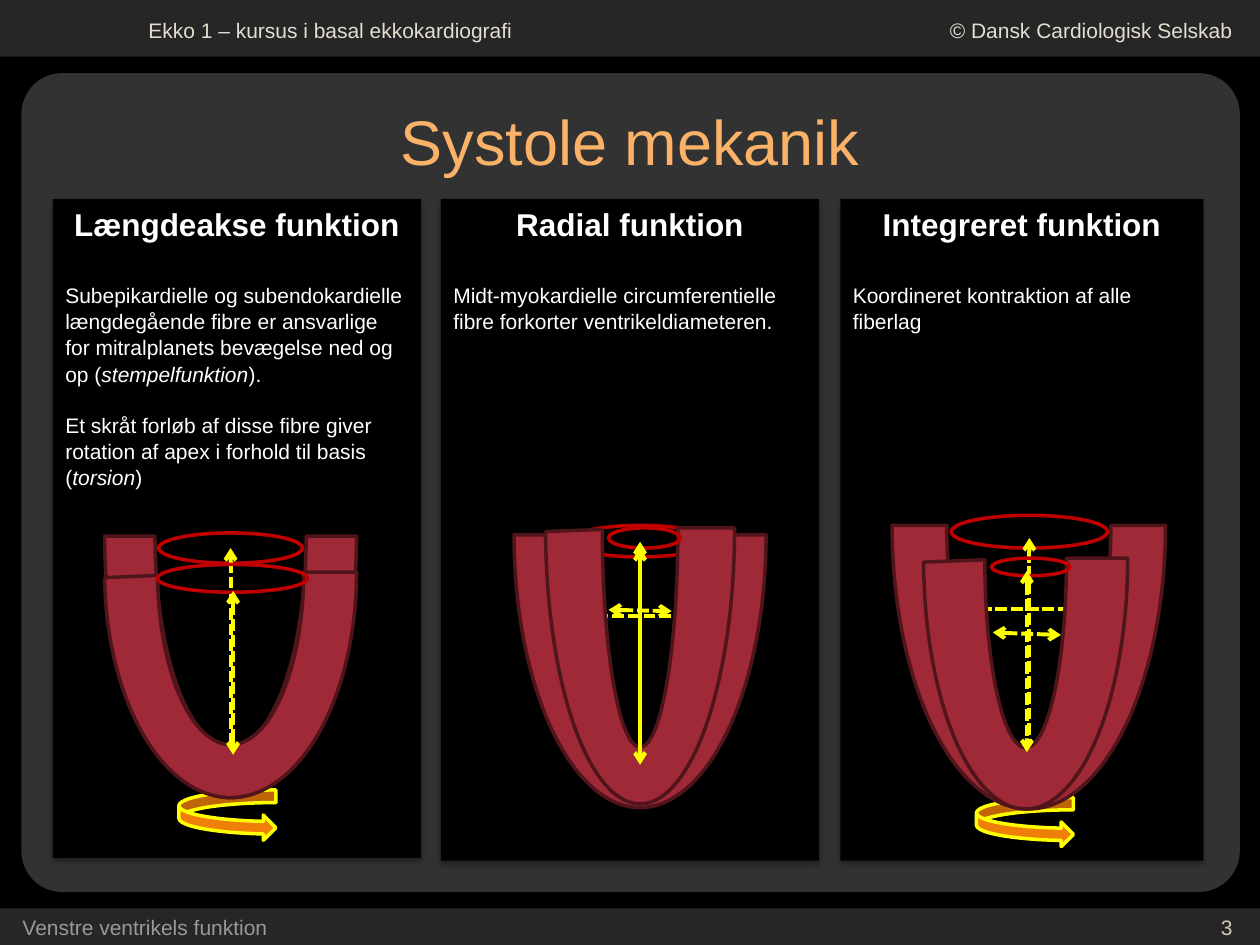
import pptx
import pptx.util
import pptx.dml.color
import pptx.oxml
import pptx.oxml.ns
import pptx.enum.dml
import pptx.enum.shapes
import pptx.enum.text
from lxml import etree

Inches = pptx.util.Inches
Pt = pptx.util.Pt
RGBColor = pptx.dml.color.RGBColor
Shape = pptx.enum.shapes.MSO_SHAPE
Align = pptx.enum.text.PP_ALIGN
qn = pptx.oxml.ns.qn

BLACK = RGBColor(0x00, 0x00, 0x00)
WHITE = RGBColor(0xFF, 0xFF, 0xFF)
BAR = RGBColor(0x26, 0x26, 0x26)
PLATE = RGBColor(0x32, 0x32, 0x32)
CREAM = RGBColor(0xE3, 0xDE, 0xD1)
SAND = RGBColor(0xD3, 0xCB, 0xB6)
GRAY = RGBColor(0x99, 0x99, 0x99)
PEACH = RGBColor(0xF9, 0xB2, 0x68)
MUSCLE = RGBColor(0x9F, 0x29, 0x36)
EDGE = RGBColor(0x50, 0x14, 0x1B)
RED = RGBColor(0xC0, 0x00, 0x00)
ORANGE = RGBColor(0xF0, 0x7F, 0x09)
YELLOW = RGBColor(0xFF, 0xFF, 0x00)

RELAXED = (108, 0, 0.2)
SHORT = (108, 214.47, 0.21)
THICK = (108, 214.7, 0.3)

# Box, wall shape, valve ring and axes; hearts are placed relative to the
# panel, rings and axes relative to the heart.
PANELS = [
    {"box": (0.42, 1.58, 2.92, 5.23),
     "head": "Længdeakse funktion",
     "body": [
         ["Subepikardielle og subendokardielle længdegående fibre er "
          "ansvarlige for mitralplanets bevægelse ned og op (",
          "stempelfunktion", ")."],
         ["Et skråt forløb af disse fibre giver rotation af apex i "
          "forhold til basis (", "torsion", ")"]],
     "twist": (1, 4.69, 0.77, 0.4),
     "hearts": [
         ((0.41, 0.6, 2, 4.15), RELAXED, (0.43, 2.05, 1.14, 0.24),
          [(1, 2.17, 1, 3.86)]),
         ((0.41, 1.17, 2, 3.58), SHORT, (0.42, 1.73, 1.19, 0.22),
          [(1.02, 1.94, 1.02, 3.24)])]},
    {"box": (3.5, 1.58, 3, 5.25),
     "head": "Radial funktion",
     "body": [["Midt-myokardielle circumferentielle fibre forkorter "
               "ventrikeldiameteren."]],
     "twist": None,
     "hearts": [
         ((0.58, 0.5, 2, 4.33), RELAXED, (0.43, 2.09, 1.14, 0.25),
          [(1, 2.27, 1, 4.03), (0.43, 2.81, 1.57, 2.81)]),
         ((0.83, 0.42, 1.5, 4.38), THICK, (0.5, 2.19, 0.57, 0.16),
          [(0.75, 2.3, 0.75, 4.07), (0.5, 2.84, 1, 2.85)])]},
    {"box": (6.67, 1.58, 2.88, 5.25),
     "head": "Integreret funktion",
     "body": [["Koordineret kontraktion af alle fiberlag"]],
     "twist": (1.08, 4.75, 0.77, 0.39),
     "hearts": [
         ((0.41, 0.34, 2.17, 4.5), RELAXED, (0.47, 2.17, 1.24, 0.26),
          [(1.09, 2.35, 1.09, 4.18), (0.47, 2.91, 1.71, 2.91)]),
         ((0.66, 0.86, 1.62, 3.98), THICK, (0.54, 1.99, 0.62, 0.14),
          [(0.82, 2.09, 0.82, 3.53), (0.55, 2.58, 1.09, 2.6)])]},
]


def shift(box, part):
    """Turn a part's offset inside a box into a place on the slide."""
    return (box[0] + part[0], box[1] + part[1], *part[2:])


def draw(shapes, kind, box, fill=None, line=None):
    shape = shapes.add_shape(kind, *map(Inches, box))
    shape.shadow.inherit = False
    if fill is None:
        shape.fill.background()
    else:
        shape.fill.solid()
        shape.fill.fore_color.rgb = fill
    if line is None:
        shape.line.fill.background()
    else:
        shape.line.color.rgb = line
        shape.line.width = Pt(2)
    return shape


def style(para, size, color, align=Align.LEFT, bold=False):
    para.alignment = align
    font = para.font
    font.name, font.size, font.bold = "Arial", Pt(size), bold
    font.color.rgb = color


def label(slide, box, text, color, align=Align.LEFT):
    frame = slide.shapes.add_textbox(*map(Inches, box)).text_frame
    frame.word_wrap = True
    frame.text = text
    style(frame.paragraphs[0], 12, color, align)


def cast(shape):
    """Give a shape a soft shadow straight below it."""
    effect = shape.element.spPr.find(qn("a:effectLst"))
    shade = etree.SubElement(effect, qn("a:outerShdw"), blurRad=str(Pt(3.1)),
                             dist=str(Pt(1.8)), dir="5400000", rotWithShape="0")
    tint = etree.SubElement(shade, qn("a:srgbClr"), val=str(BLACK))
    etree.SubElement(tint, qn("a:alpha"), val="35000")


def axis(shapes, ends):
    """Dashed line with an arrowhead at both ends."""
    link = shapes.add_connector(pptx.enum.shapes.MSO_CONNECTOR.STRAIGHT,
                                *map(Inches, ends))
    link.line.color.rgb = YELLOW
    link.line.width = Pt(2.25)
    link.line.dash_style = pptx.enum.dml.MSO_LINE.SQUARE_DOT
    for tag in ("a:headEnd", "a:tailEnd"):
        etree.SubElement(link.line._get_or_add_ln(), qn(tag), type="arrow")
    etree.SubElement(link.element.spPr, qn("a:effectLst"))


def heart(slide, box, bend, ring, axes):
    shapes = slide.shapes.add_group_shape().shapes
    wall = draw(shapes, Shape.BLOCK_ARC, box, MUSCLE, EDGE)
    wall.rotation = 180
    for i, value in enumerate(bend):
        wall.adjustments[i] = value
    draw(shapes, Shape.OVAL, shift(box, ring), line=RED)
    for x1, y1, x2, y2 in axes:
        axis(shapes, shift(box, (x1, y1)) + shift(box, (x2, y2)))


def panel(slide, box, head, body, twist, hearts):
    card = draw(slide.shapes, Shape.RECTANGLE, box, BLACK)
    cast(card)
    frame = card.text_frame
    frame.word_wrap = True
    frame.vertical_anchor = pptx.enum.text.MSO_ANCHOR.TOP
    frame.text = head
    style(frame.paragraphs[0], 18, WHITE, Align.CENTER, True)
    # Body text, every second run in italics
    for i, parts in enumerate(body):
        para = frame.add_paragraph()
        para.line_spacing = 1.04
        para.space_before = Pt(14.4 if i else 22)
        style(para, 12, WHITE)
        for j, text in enumerate(parts):
            run = para.add_run()
            run.text = text
            if j % 2:
                run.font.italic = True
    # Rotation arrow below the apex, then the two phases
    if twist:
        draw(slide.shapes, Shape.CURVED_RIGHT_ARROW, shift(box, twist),
             ORANGE, YELLOW)
    for place, bend, ring, axes in hearts:
        heart(slide, shift(box, place), bend, ring, axes)


def frame_page(slide, wide, high):
    """Background, bars and the labels in them."""
    slide.background.fill.solid()
    slide.background.fill.fore_color.rgb = BLACK
    draw(slide.shapes, Shape.RECTANGLE, (0, high - 0.29, wide, 0.29), BAR)
    draw(slide.shapes, Shape.RECTANGLE, (0, 0, wide, 0.45), BAR)
    plate = draw(slide.shapes, Shape.ROUNDED_RECTANGLE,
                 (0.17, 0.58, wide - 0.33, high - 1), PLATE)
    plate.adjustments[0] = 0.05
    label(slide, (1.08, 0.09, 3.75, 0.3),
          "Ekko 1 – kursus i basal ekkokardiografi", CREAM)
    label(slide, (wide - 3.11, 0.09, 2.99, 0.3),
          "© Dansk Cardiologisk Selskab", CREAM, Align.RIGHT)
    label(slide, (0.08, high - 0.29, 3.17, 0.25),
          "Venstre ventrikels funktion", GRAY)
    label(slide, (wide - 2.45, high - 0.29, 2.33, 0.25), "3", SAND, Align.RIGHT)


def headline(slide, box, text):
    title = slide.shapes.title
    title.left, title.top, title.width, title.height = map(Inches, box)
    title.text_frame.text = text
    title.text_frame.vertical_anchor = pptx.enum.text.MSO_ANCHOR.MIDDLE
    style(title.text_frame.paragraphs[0], 36, PEACH, Align.CENTER)
    title.element.getparent().append(title.element)  # in front of the plate


def main():
    deck = pptx.Presentation()
    deck.slide_width, deck.slide_height = Inches(10), Inches(7.5)
    slide = deck.slides.add_slide(deck.slide_layouts[5])
    frame_page(slide, 10, 7.5)
    headline(slide, (0.5, 0.67, 9, 0.88), "Systole mekanik")
    for item in PANELS:
        panel(slide, **item)
    deck.save("out.pptx")


if __name__ == "__main__":
    main()
